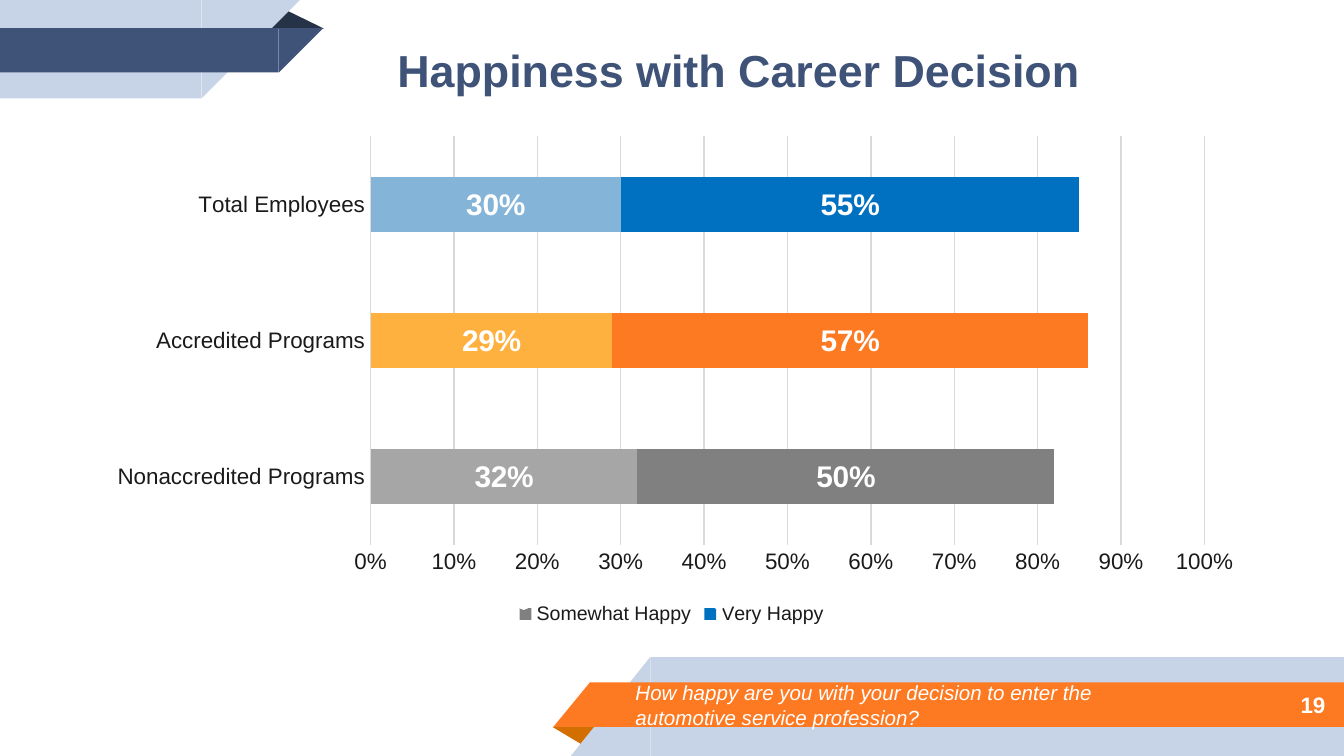
from dataclasses import dataclass

from lxml import etree
from pptx import Presentation
from pptx.chart.data import CategoryChartData
from pptx.dml.color import RGBColor
from pptx.enum.chart import XL_CHART_TYPE, XL_LEGEND_POSITION, XL_TICK_MARK
from pptx.enum.shapes import MSO_SHAPE as SHAPE
from pptx.enum.text import MSO_ANCHOR as ANCHOR, PP_ALIGN as ALIGN
from pptx.oxml.ns import qn
from pptx.util import Cm, Pt


@dataclass(frozen=True)
class Theme:
    font: str = "Arial"
    navy: str = "3F5378"
    dark_navy: str = "263248"
    pale: str = "C7D3E6"
    orange: str = "FD7A22"
    dark_orange: str = "D26F00"
    white: str = "FFFFFF"
    ink: str = "1A1A1A"
    grid: str = "D9D9D9"
    gray: str = "808080"
    blue: str = "0070C0"
    light_gray: str = "A6A6A6"
    amber: str = "FFB13F"
    light_blue: str = "85B4D9"
    title_size: float = 24
    value_size: float = 16
    label_size: float = 12
    note_size: float = 11
    legend_size: float = 10.5


THEME = Theme()


def rgb(color):
    return RGBColor.from_string(color)


def set_font(font, size, color, bold=False, italic=False):
    font.name, font.size = THEME.font, Pt(size)
    font.bold, font.italic = bold, italic
    font.color.rgb = rgb(color)


def set_fill(fmt, color):
    fmt.fill.solid()
    fmt.fill.fore_color.rgb = rgb(color)


def add_shape(slide, kind, box, color, rotation=0, flip=False):
    sp = slide.shapes.add_shape(kind, *map(Cm, box))
    sp.shadow.inherit = False
    set_fill(sp, color)
    sp.line.fill.background()
    sp.rotation = rotation
    if flip:
        sp._element.spPr.xfrm.set("flipH", "1")
    return sp


def add_fold(slide, box, color, rotation=0):
    sp = add_shape(slide, SHAPE.ISOSCELES_TRIANGLE, box, color, rotation)
    sp.adjustments[0] = 0.324


def add_ribbon(slide, left, top, width, height, tip, color, rotation=0):
    """Draw a bar with a slanted tip: on its left, or on its right if rotated."""
    tip_left = left + width if rotation else left - tip
    add_shape(slide, SHAPE.RECTANGLE, (left, top, width, height), color, rotation, True)
    add_shape(slide, SHAPE.RIGHT_TRIANGLE, (tip_left, top, tip, height), color, rotation, True)


def add_text(slide, text, box, size, color, align=ALIGN.LEFT, bold=False, italic=False):
    tf = slide.shapes.add_textbox(*map(Cm, box)).text_frame
    tf.word_wrap = True
    tf.vertical_anchor = ANCHOR.MIDDLE
    tf.margin_left = tf.margin_right = tf.margin_top = tf.margin_bottom = Cm(0.25)
    p = tf.paragraphs[0]
    p.alignment = align
    r = p.add_run()
    r.text = text
    set_font(r.font, size, color, bold, italic)


def place_plot(chart, **fractions):
    """Fix the inner plot area, in fractions of the chart frame."""
    area = chart._chartSpace.chart.plotArea
    for old in area.findall(qn("c:layout")):
        area.remove(old)
    layout = etree.Element(qn("c:layout"))
    manual = etree.SubElement(layout, qn("c:manualLayout"))
    settings = {"layoutTarget": "inner", "xMode": "edge", "yMode": "edge", **fractions}
    for name, value in settings.items():
        etree.SubElement(manual, qn(f"c:{name}")).set("val", str(value))
    area.insert(0, layout)


def style_axis(axis):
    axis.major_tick_mark = axis.minor_tick_mark = XL_TICK_MARK.NONE
    set_font(axis.tick_labels.font, THEME.label_size, THEME.ink)


def style_series(series, color, point_colors):
    set_fill(series.format, color)
    series.invert_if_negative = False
    for i, point_color in enumerate(point_colors):
        set_fill(series.points[i].format, point_color)
    labels = series.data_labels
    labels.show_value = True
    labels.number_format, labels.number_format_is_linked = "0%", False
    set_font(labels.font, THEME.value_size, THEME.white, bold=True)


def add_happiness_chart(slide, box):
    data = CategoryChartData(number_format="0%")
    data.categories = ["Nonaccredited Programs", "Accredited Programs", "Total Employees"]
    data.add_series("Somewhat Happy", (0.32, 0.29, 0.30))
    data.add_series("Very Happy", (0.50, 0.57, 0.55))
    chart = slide.shapes.add_chart(XL_CHART_TYPE.BAR_STACKED, *map(Cm, box), data).chart
    chart.has_title = False
    set_font(chart.font, THEME.legend_size, THEME.ink)
    place_plot(chart, x=0.24, y=0.02, w=0.72, h=0.81)

    plot = chart.plots[0]
    plot.gap_width, plot.overlap = 150, 100
    plot.vary_by_categories = False
    somewhat, very = plot.series
    style_series(somewhat, THEME.gray, (THEME.light_gray, THEME.amber, THEME.light_blue))
    style_series(very, THEME.blue, (THEME.gray, THEME.orange, THEME.blue))

    values, cats = chart.value_axis, chart.category_axis
    style_axis(values)
    style_axis(cats)
    values.minimum_scale, values.maximum_scale, values.major_unit = 0, 1, 0.1
    values.tick_labels.number_format = "0%"
    values.tick_labels.number_format_is_linked = False
    values.format.line.fill.background()
    for line in (values.major_gridlines.format.line, cats.format.line):
        line.color.rgb = rgb(THEME.grid)
        line.width = Pt(0.75)

    chart.has_legend = True
    chart.legend.position = XL_LEGEND_POSITION.BOTTOM
    chart.legend.include_in_layout = False
    set_font(chart.legend.font, THEME.legend_size, THEME.ink)


def main():
    prs = Presentation()
    prs.slide_width, prs.slide_height = Cm(25.4), Cm(14.29)
    slide = prs.slides.add_slide(prs.slide_layouts[6])

    add_fold(slide, (10.44, 13.74, 0.89, 0.36), THEME.dark_orange, 180)
    add_ribbon(slide, 12.29, 12.42, 13.11, 1.87, 1.5, THEME.pale)
    add_ribbon(slide, 11.15, 12.9, 14.25, 0.84, 0.69, THEME.orange)

    add_fold(slide, (5.03, 0.18, 1.09, 0.36), THEME.dark_navy)
    add_ribbon(slide, 0, 0, 3.81, 1.86, 1.86, THEME.pale, 180)
    add_ribbon(slide, 0, 0.53, 5.27, 0.84, 0.84, THEME.navy, 180)

    add_text(slide, "How happy are you with your decision to enter the automotive service profession?",
             (11.76, 12.88, 10.87, 0.89), THEME.note_size, THEME.white, italic=True)
    add_text(slide, "19", (21.16, 12.88, 4.14, 0.89), THEME.label_size, THEME.white,
             align=ALIGN.RIGHT, bold=True)
    add_text(slide, "Happiness with Career Decision", (7.26, 0.25, 15.57, 2.13),
             THEME.title_size, THEME.navy, bold=True)

    add_happiness_chart(slide, (1.75, 2.39, 21.89, 9.53))
    for left in (13.44, 9.75):
        add_shape(slide, SHAPE.OVAL, (left, 11.1, 0.3, 0.43), THEME.white)

    prs.save("out.pptx")


if __name__ == "__main__":
    main()
